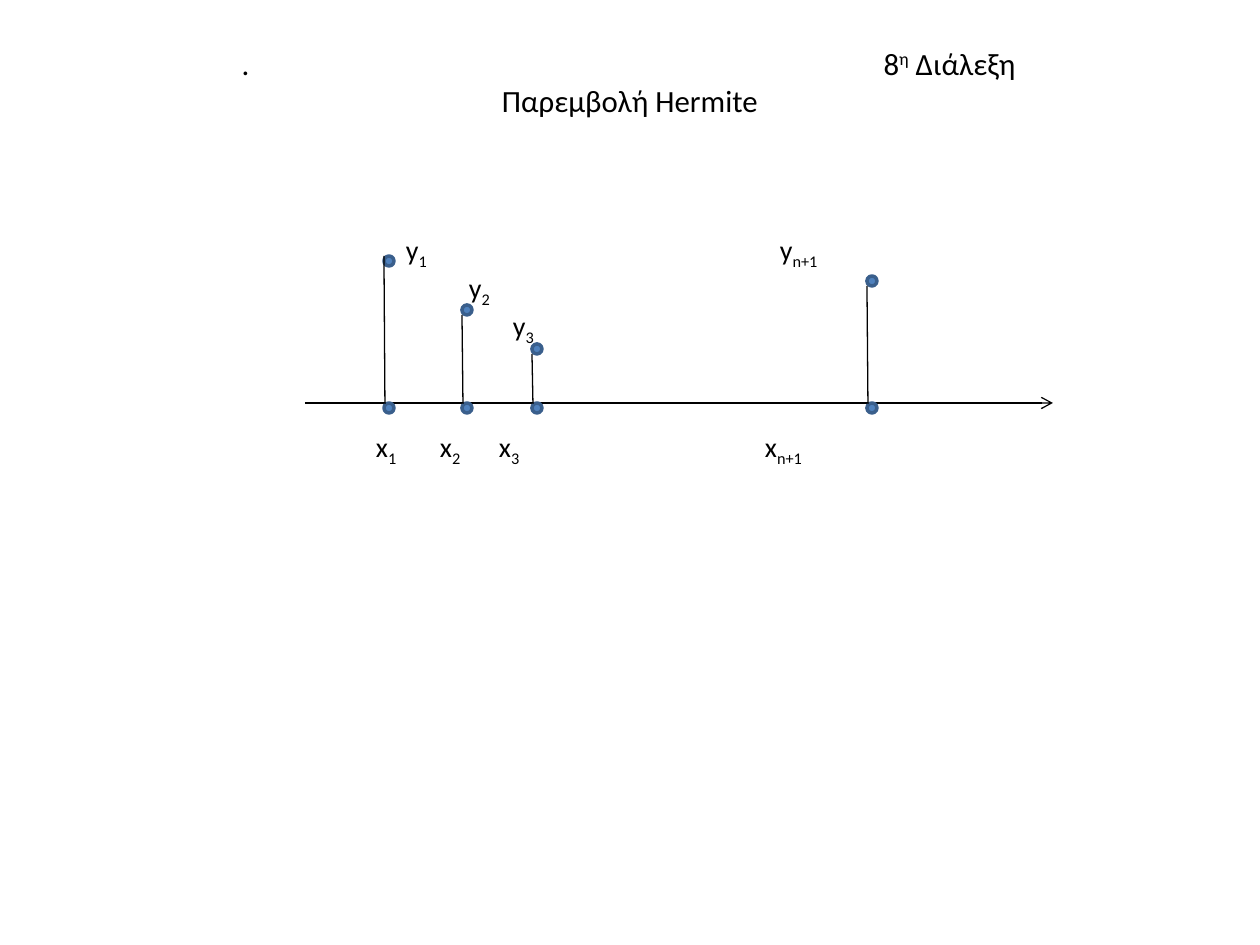
"""Build the Hermite interpolation slide with its nodes, values and labels."""
import pptx
import pptx.dml.color
import pptx.enum.shapes
import pptx.enum.text
import pptx.oxml
import pptx.oxml.ns
import pptx.util

PX = 914400 // 126
HUES = {"ink": "000000", "dot": "4F81BD", "rim": "3A5F8C"}
FONT = "Calibri"
HEAD = [("\t.\t8", 0), ("η", 30), (" Διάλεξη", 0)]
NAME = [("Παρεμβολή Hermite", 0)]
TABS = [166, 808]
AXIS = {"left": 305, "right": 1053, "y": 403}
DOT = 10
NODES = [
    {"sub": "1", "x": 384, "y": 256, "stem": 256, "xtag": 376, "ytag": (406, 233)},
    {"sub": "2", "x": 462, "y": 305, "stem": 315, "xtag": 440, "ytag": (469, 271)},
    {"sub": "3", "x": 532, "y": 344, "stem": 354, "xtag": 499, "ytag": (513, 309)},
    {"sub": "n+1", "x": 867, "y": 276, "stem": 286, "xtag": 765, "ytag": (780, 233)},
]
XTOP = 430
ALIGN = pptx.enum.text.PP_ALIGN


def px(num):
    return pptx.util.Emu(num * PX)


def hue(key):
    return pptx.dml.color.RGBColor.from_string(HUES[key])


def write(para, runs, size=16, align=ALIGN.LEFT, tabs=()):
    para.alignment = align
    if tabs:
        stops = pptx.oxml.ns.qn("a:tabLst")
        group = para._p.get_or_add_pPr().makeelement(stops, {})
        para._p.get_or_add_pPr().append(group)
        for pos in tabs:
            tab = group.makeelement(pptx.oxml.ns.qn("a:tab"), {"pos": str(pos * PX), "algn": "l"})
            group.append(tab)
    for text, shift in runs:
        run = para.add_run()
        run.text = text
        run.font.size = pptx.util.Pt(size)
        run.font.name = FONT
        run.font.color.rgb = hue("ink")
        if shift:
            run.font._element.set("baseline", str(shift * 1000))


def label(slide, sign, sub, left, top):
    box = slide.shapes.add_textbox(px(left), px(top), px(60), px(38))
    frame = box.text_frame
    frame.word_wrap = False
    frame.margin_left = frame.margin_right = frame.margin_top = frame.margin_bottom = 0
    write(frame.paragraphs[0], [(sign, 0), (sub, -25)])


def line(slide, start, end, arrow=False):
    kind = pptx.enum.shapes.MSO_CONNECTOR.STRAIGHT
    rule = slide.shapes.add_connector(kind, *map(px, start + end))
    rule.line.color.rgb = hue("ink")
    rule.line.width = pptx.util.Pt(0.75)
    props = rule._element.spPr
    if arrow:
        tail = pptx.oxml.ns.qn("a:tailEnd")
        edge = rule.line._get_or_add_ln()
        edge.append(edge.makeelement(tail, {"type": "arrow"}))
    props.append(props.makeelement(pptx.oxml.ns.qn("a:effectLst"), {}))


def dot(slide, left, top):
    kind = pptx.enum.shapes.MSO_SHAPE.OVAL
    mark = slide.shapes.add_shape(kind, px(left), px(top), px(DOT), px(DOT))
    mark.shadow.inherit = False
    mark.fill.solid()
    mark.fill.fore_color.rgb = hue("dot")
    mark.line.color.rgb = hue("rim")
    mark.line.width = pptx.util.Pt(2)


def main():
    deck = pptx.Presentation()
    deck.slide_width, deck.slide_height = px(1260), px(945)
    slide = deck.slides.add_slide(deck.slide_layouts[5])

    title = slide.shapes.title
    title.left, title.top, title.width, title.height = map(px, (63, 38, 1134, 110))
    frame = title.text_frame
    frame.word_wrap = True
    frame.auto_size = pptx.enum.text.MSO_AUTO_SIZE.NONE
    frame.vertical_anchor = pptx.enum.text.MSO_ANCHOR.TOP
    write(frame.paragraphs[0], HEAD, size=17.6, tabs=TABS)
    write(frame.add_paragraph(), NAME, size=17.6, align=ALIGN.CENTER)

    base = AXIS["y"]
    line(slide, (AXIS["left"], base), (AXIS["right"], base), arrow=True)
    for node in NODES:
        dot(slide, node["x"], node["y"])
        dot(slide, node["x"], base)
        line(slide, (node["x"] + 1, base + 1), (node["x"], node["stem"]))
        label(slide, "x", node["sub"], node["xtag"], XTOP)
        label(slide, "y", node["sub"], *node["ytag"])
    deck.save("out.pptx")


if __name__ == "__main__":
    main()
